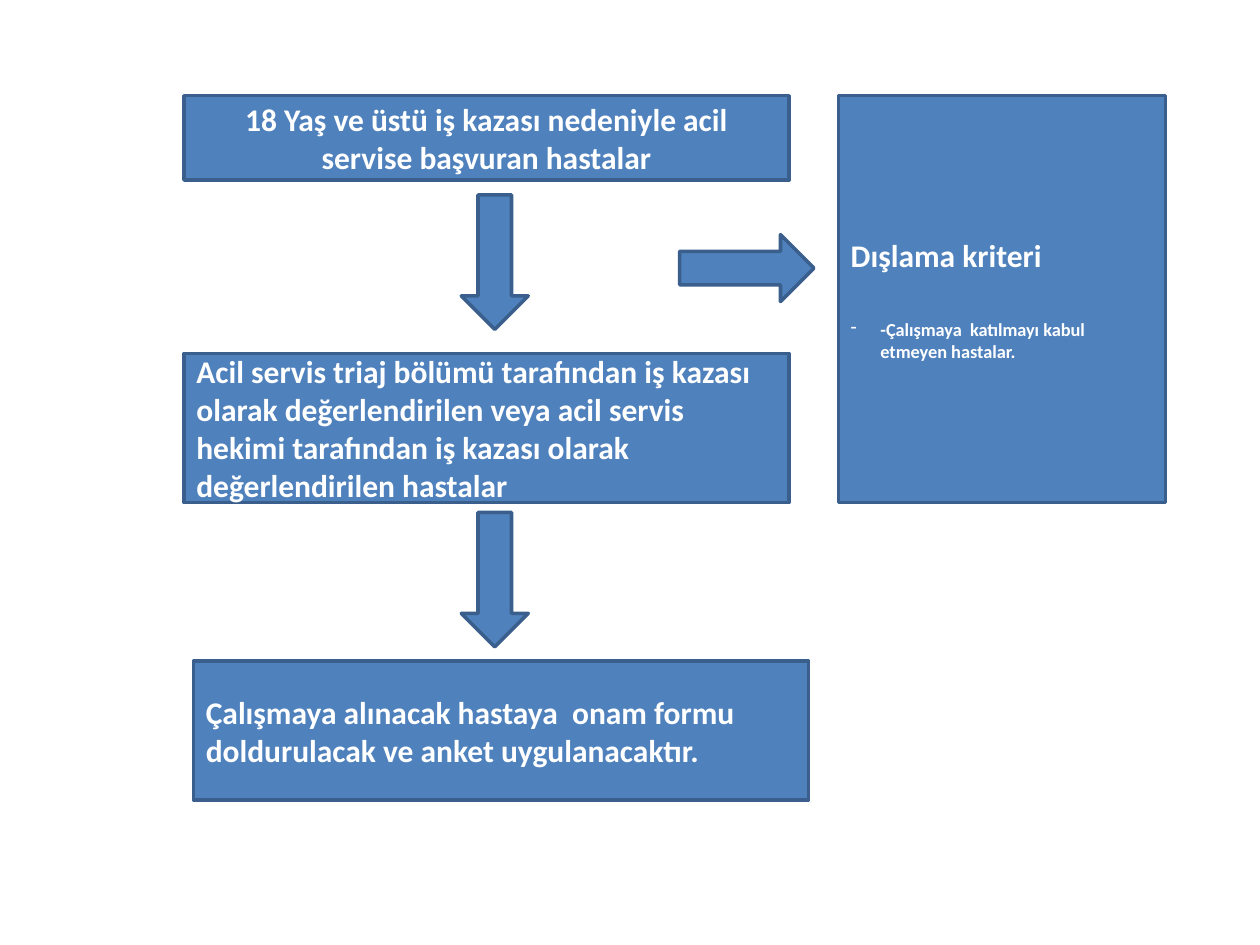
import dataclasses

import pptx
import pptx.dml.color
import pptx.enum.shapes
import pptx.enum.text
import pptx.util
from lxml import etree

Cm = pptx.util.Cm
Pt = pptx.util.Pt
Color = pptx.dml.color.RGBColor
Preset = pptx.enum.shapes.MSO_SHAPE
Align = pptx.enum.text.PP_ALIGN


@dataclasses.dataclass(frozen=True)
class Theme:
    """Colours, type and arrow sizes of the flow chart."""
    fill: str = "4F81BD"
    outline: str = "3A5F8C"
    ink: str = "FFFFFF"
    font: str = "Calibri"
    step_size: float = 18
    note_size: float = 10.5
    line_width: float = 2
    arrow_length: float = 2.71
    arrow_breadth: float = 1.35


THEME = Theme()


def add_block(slide, preset, left, top, width, height):
    """Add a filled and outlined shape, measured in centimetres."""
    block = slide.shapes.add_shape(preset, Cm(left), Cm(top), Cm(width), Cm(height))
    block.shadow.inherit = False
    block.fill.solid()
    block.fill.fore_color.rgb = Color.from_string(THEME.fill)
    block.line.color.rgb = Color.from_string(THEME.outline)
    block.line.width = Pt(THEME.line_width)
    block.text_frame.word_wrap = True
    block.text_frame.vertical_anchor = pptx.enum.text.MSO_ANCHOR.MIDDLE
    return block


def write(paragraph, wording, size, align=Align.LEFT):
    """Write one bold run into a paragraph."""
    paragraph.alignment = align
    run = paragraph.add_run()
    run.text = wording
    run.font.name = THEME.font
    run.font.size = Pt(size)
    run.font.bold = True
    run.font.color.rgb = Color.from_string(THEME.ink)


def add_dash(paragraph, indent):
    """Give a paragraph a hanging dash bullet."""
    properties = paragraph._p.get_or_add_pPr()
    properties.set("marL", str(Cm(indent)))
    properties.set("indent", str(-Cm(indent)))
    bullet = etree.SubElement(properties, pptx.oxml.ns.qn("a:buChar"))
    bullet.set("char", "-")


def build_flow(slide, left, top, width):
    """Place the three patient steps and the arrows between them."""
    steps = (
        (Preset.FLOWCHART_PROCESS, 0, 0, width, 1.7, Align.CENTER,
         "18 Yaş ve üstü iş kazası nedeniyle acil servise başvuran hastalar"),
        (Preset.FLOWCHART_PROCESS, 0, 5.2, width, 3, Align.LEFT,
         "Acil servis triaj bölümü tarafından iş kazası olarak değerlendirilen "
         "veya acil servis hekimi tarafından iş kazası olarak değerlendirilen hastalar"),
        (Preset.RECTANGLE, 0.19, 11.4, width + 0.2, 2.8, Align.LEFT,
         "Çalışmaya alınacak hastaya  onam formu doldurulacak ve anket uygulanacaktır."),
    )
    for preset, dx, dy, step_width, height, align, wording in steps:
        step = add_block(slide, preset, left + dx, top + dy, step_width, height)
        write(step.text_frame.paragraphs[0], wording, THEME.step_size, align)
    for dy in (2, 8.4):
        add_block(slide, Preset.DOWN_ARROW, left + 5.59, top + dy,
                  THEME.arrow_breadth, THEME.arrow_length)


def build_exclusion(slide, left, top, width, height):
    """Place the exclusion criterion and the arrow leading to it."""
    add_block(slide, Preset.RIGHT_ARROW, left - 3.2, top + 2.8,
              THEME.arrow_length, THEME.arrow_breadth)
    exclusion = add_block(slide, Preset.RECTANGLE, left, top, width, height).text_frame
    heading = exclusion.paragraphs[0]
    write(heading, "Dışlama kriteri", THEME.step_size)
    heading.space_after = Pt(25.6)
    criterion = exclusion.add_paragraph()
    write(criterion, "-Çalışmaya  katılmayı kabul etmeyen hastalar.", THEME.note_size)
    add_dash(criterion, 0.6)


def main():
    """Build the patient selection slide and save it."""
    deck = pptx.Presentation()
    deck.slide_width, deck.slide_height = Cm(25.4), Cm(19.05)
    slide = deck.slides.add_slide(deck.slide_layouts[6])
    build_flow(slide, 3.71, 1.93, 12.2)
    build_exclusion(slide, 16.9, 1.93, 6.6, 8.2)
    deck.save("out.pptx")


if __name__ == "__main__":
    main()
